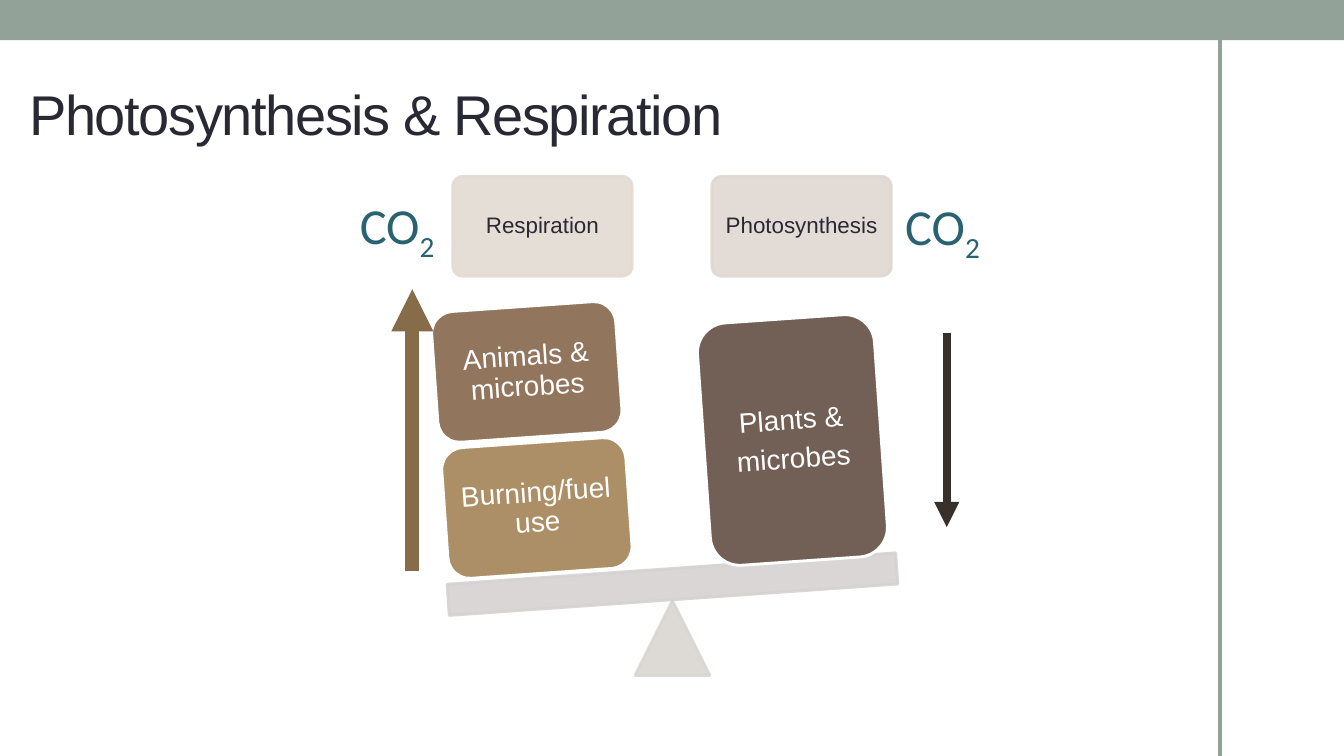
from lxml.etree import SubElement
from pptx import Presentation
from pptx.dml.color import RGBColor
from pptx.enum.shapes import MSO_CONNECTOR as CONNECTOR, MSO_SHAPE as SHAPE
from pptx.enum.text import MSO_ANCHOR as ANCHOR, MSO_AUTO_SIZE as AUTO_SIZE, PP_ALIGN as ALIGN
from pptx.oxml.ns import qn
from pptx.util import Inches, Pt

INK = "292934"
SAGE = "93A299"
WHITE = "FFFFFF"
TEAL = "296270"
TILT = -4


def rgb(value):
    return RGBColor.from_string(value)


def style_font(font, size, color, name="Arial"):
    font.name = name
    font.size = Pt(size)
    font.color.rgb = rgb(color)


def add_shape(page, kind, place, fill, line=None, opacity=100, tilt=0):
    shape = page.shapes.add_shape(kind, *map(Inches, place))
    shape.shadow.inherit = False
    shape.rotation = tilt
    shape.fill.solid()
    shape.fill.fore_color.rgb = rgb(fill)
    if line:
        shape.line.color.rgb = rgb(line)
        shape.line.width = Pt(2.08)
    else:
        shape.line.fill.background()
    if opacity < 100:
        for color in shape.element.spPr.iter(qn("a:srgbClr")):
            SubElement(color, qn("a:alpha"), val=str(opacity * 1000))
    return shape


def write_centred(shape, text, size, color, inset):
    frame = shape.text_frame
    frame.word_wrap = True
    frame.vertical_anchor = ANCHOR.MIDDLE
    frame.margin_left = frame.margin_right = Inches(inset)
    frame.margin_top = frame.margin_bottom = Inches(inset)
    frame.text = text
    for para in frame.paragraphs:
        para.alignment = ALIGN.CENTER
        para.line_spacing = 0.9
        para.space_after = Pt(size * 0.3)
        style_font(para.runs[0].font, size, color)


def add_heading(page, left, text, fill):
    heading = add_shape(page, SHAPE.ROUNDED_RECTANGLE, (left, 1.75, 1.78, 0.99), fill, fill, 90)
    heading.adjustments[0] = 0.1
    write_centred(heading, text, 16, INK, 0.07)


def add_weight(page, place, text, fill):
    """A tilted block that rests on the beam of the scale."""
    weight = add_shape(page, SHAPE.ROUNDED_RECTANGLE, place, fill, WHITE, tilt=TILT)
    write_centred(weight, text, 20, WHITE, 0.08)


def add_line(page, x, top, bottom, color, width, arrow=False):
    line = page.shapes.add_connector(
        CONNECTOR.STRAIGHT, Inches(x), Inches(top), Inches(x), Inches(bottom))
    line.line.color.rgb = rgb(color)
    line.line.width = Pt(width)
    if arrow:
        SubElement(line.line._get_or_add_ln(), qn("a:tailEnd"), type="triangle")
    SubElement(line.element.spPr, qn("a:effectLst"))


def add_formula(page, left, top, width):
    box = page.shapes.add_textbox(Inches(left), Inches(top), Inches(width), Inches(0.71))
    frame = box.text_frame
    frame.word_wrap = True
    frame.auto_size = AUTO_SIZE.SHAPE_TO_FIT_TEXT
    para = frame.paragraphs[0]
    for text, baseline in (("CO", 0), ("2", -25)):
        span = para.add_run()
        span.text = text
        style_font(span.font, 36, TEAL, "Calibri")
        if baseline:
            span.font._element.set("baseline", str(baseline * 1000))


def set_title(page, text):
    title = page.shapes.title
    title.left, title.top = Inches(0.19), Inches(0.58)
    title.width, title.height = Inches(10.6), Inches(1.08)
    frame = title.text_frame
    frame.text = text
    frame.vertical_anchor = ANCHOR.MIDDLE
    para = frame.paragraphs[0]
    para.alignment = ALIGN.LEFT
    font = para.runs[0].font
    style_font(font, 40, INK)
    font._element.set("spc", "-100")


def main():
    deck = Presentation()
    deck.slide_width, deck.slide_height = Inches(13.33), Inches(7.5)
    page = deck.slides.add_slide(deck.slide_layouts[5])

    add_shape(page, SHAPE.RECTANGLE, (0, 0, 13.33, 0.4), SAGE)
    add_line(page, 12.1, 0.38, 7.5, SAGE, 3.25)
    set_title(page, "Photosynthesis & Respiration")

    add_heading(page, 4.49, "Respiration", "E3DBD3")
    add_heading(page, 7.06, "Photosynthesis", "DFD8D2")

    add_shape(page, SHAPE.ISOSCELES_TRIANGLE, (6.3, 5.96, 0.74, 0.74), "DAD5D1", "DAD5D1", 90)
    add_shape(page, SHAPE.RECTANGLE, (4.44, 5.64, 4.46, 0.31), "D5D2D1", "D5D2D1", 90, TILT)
    add_weight(page, (4.41, 4.39, 1.83, 1.3), "Burning/fuel use", "AD8F67")
    add_weight(page, (4.31, 3.04, 1.83, 1.3), "Animals & microbes", "91755D")
    add_weight(page, (6.98, 3.16, 1.76, 2.41), "Plants &\nmicrobes", "726056")

    add_line(page, 9.39, 3.3, 5.23, "39302B", 6, arrow=True)
    add_line(page, 4.09, 5.66, 2.87, "866C49", 10, arrow=True)
    add_formula(page, 3.47, 1.88, 0.98)
    add_formula(page, 8.88, 1.89, 1.03)

    deck.save("out.pptx")


if __name__ == "__main__":
    main()
